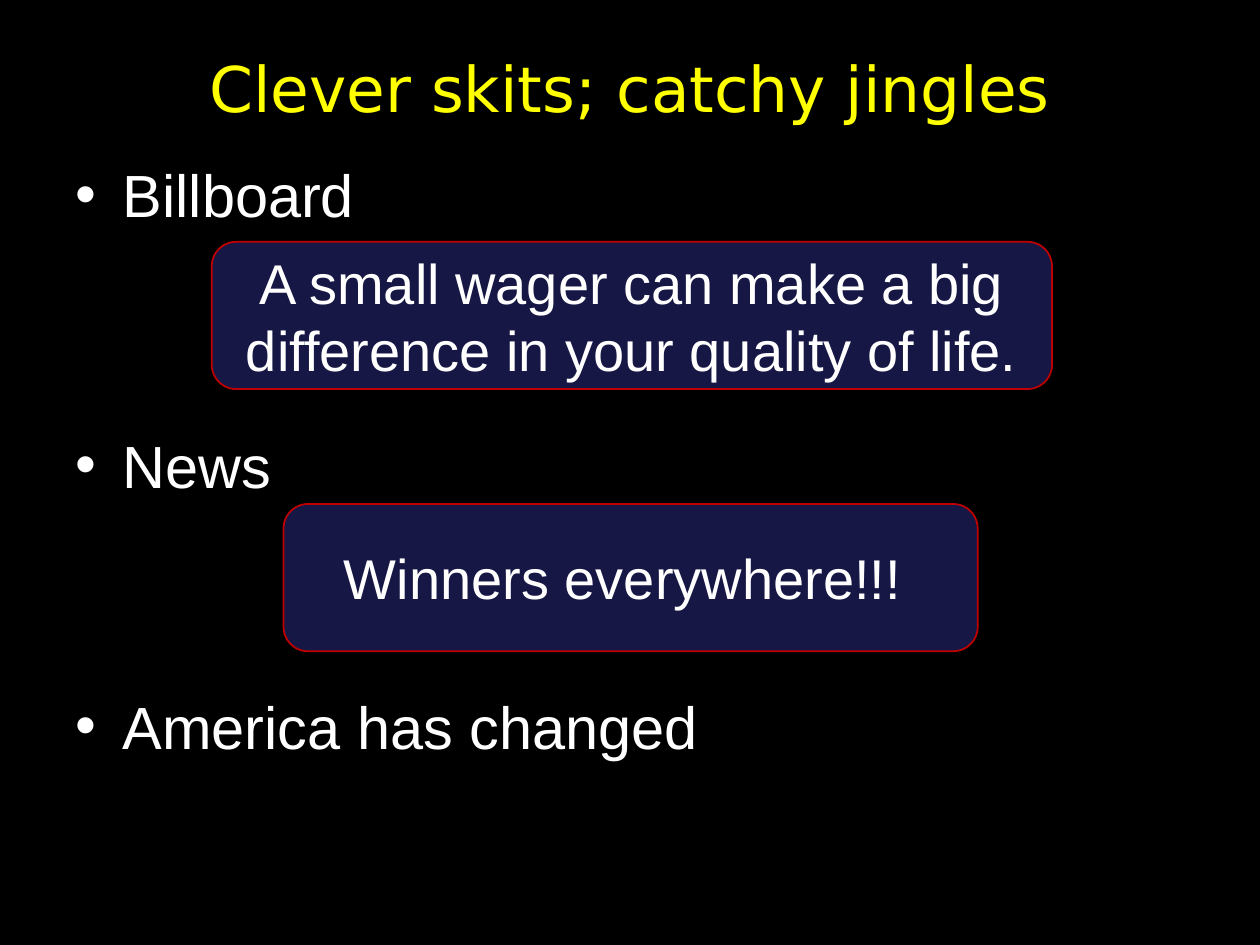
from pptx import Presentation
from pptx.dml.color import RGBColor
from pptx.enum import shapes, text
from pptx.oxml.ns import qn
from pptx.util import Pt
from lxml import etree

BLACK = RGBColor(0, 0, 0)
WHITE = RGBColor(255, 255, 255)
YELLOW = RGBColor(255, 255, 0)
NAVY = RGBColor(0x17, 0x17, 0x45)
RED = RGBColor(0xC0, 0, 0)


class Deck:
    """Holds the style and the current slide."""

    title_font = {"name": "DejaVu Sans", "size": Pt(36)}
    list_font = {"name": "Arial", "size": Pt(34)}
    callout_font = {"name": "Arial", "size": Pt(32)}
    hanging = Pt(27)

    def __init__(self, width, height):
        self.presentation = Presentation()
        self.presentation.slide_width = Pt(width)
        self.presentation.slide_height = Pt(height)

    def add_slide(self):
        layout = self.presentation.slide_layouts[1]
        self.slide = self.presentation.slides.add_slide(layout)
        self.slide.background.fill.solid()
        self.slide.background.fill.fore_color.rgb = BLACK

    def place(self, part, left, top, width, height):
        bounds = {"left": left, "top": top, "width": width, "height": height}
        for side, points in bounds.items():
            setattr(part, side, Pt(points))

    def style(self, paragraph, font_values, color):
        for key, value in font_values.items():
            setattr(paragraph.font, key, value)
        paragraph.font.color.rgb = color

    def set_frame(self, frame, anchor):
        values = {"word_wrap": True, "vertical_anchor": anchor,
                  "auto_size": text.MSO_AUTO_SIZE.NONE}
        for key, value in values.items():
            setattr(frame, key, value)

    def centre(self, frame, wording, font_values, color):
        self.set_frame(frame, text.MSO_ANCHOR.MIDDLE)
        paragraph = frame.paragraphs[0]
        paragraph.text = wording
        paragraph.alignment = text.PP_ALIGN.CENTER
        self.style(paragraph, font_values, color)

    def title(self, wording, *bounds):
        heading = self.slide.shapes.title
        self.place(heading, *bounds)
        self.centre(heading.text_frame, wording, self.title_font, YELLOW)

    def bullets(self, topics, *bounds):
        """Fill the body with (wording, space before) pairs."""
        body = self.slide.placeholders[1]
        self.place(body, *bounds)
        frame = body.text_frame
        self.set_frame(frame, text.MSO_ANCHOR.TOP)
        frame.margin_top = Pt(6)
        for index, (wording, gap) in enumerate(topics):
            paragraph = frame.add_paragraph() if index else frame.paragraphs[0]
            paragraph.text = wording
            paragraph.space_before = Pt(gap)
            properties = paragraph._p.get_or_add_pPr()
            properties.set("marL", str(self.hanging))
            properties.set("indent", str(-self.hanging))
            etree.SubElement(properties, qn("a:buChar"), char="•")
            self.style(paragraph, self.list_font, WHITE)

    def callout(self, wording, *bounds):
        box = self.slide.shapes.add_shape(
            shapes.MSO_SHAPE.ROUNDED_RECTANGLE, 0, 0, 0, 0)
        self.place(box, *bounds)
        box.shadow.inherit = False
        box.fill.solid()
        box.fill.fore_color.rgb = NAVY
        box.line.color.rgb = RED
        box.line.width = Pt(1)
        self.centre(box.text_frame, wording, self.callout_font, WHITE)


def main():
    deck = Deck(720, 540)
    deck.add_slide()
    deck.title("Clever skits; catchy jingles", 36, 21.6, 648, 56.2)
    deck.bullets([("Billboard", 0), ("News", 114), ("America has changed", 108.3)],
                 36, 84.2, 648, 426.2)
    deck.callout("A small wager can make a big difference in your quality of life.",
                 121, 138.2, 480.2, 84.2)
    deck.callout("Winners everywhere!!! ", 162, 288, 396.7, 84.2)
    deck.presentation.save("out.pptx")


if __name__ == "__main__":
    main()
